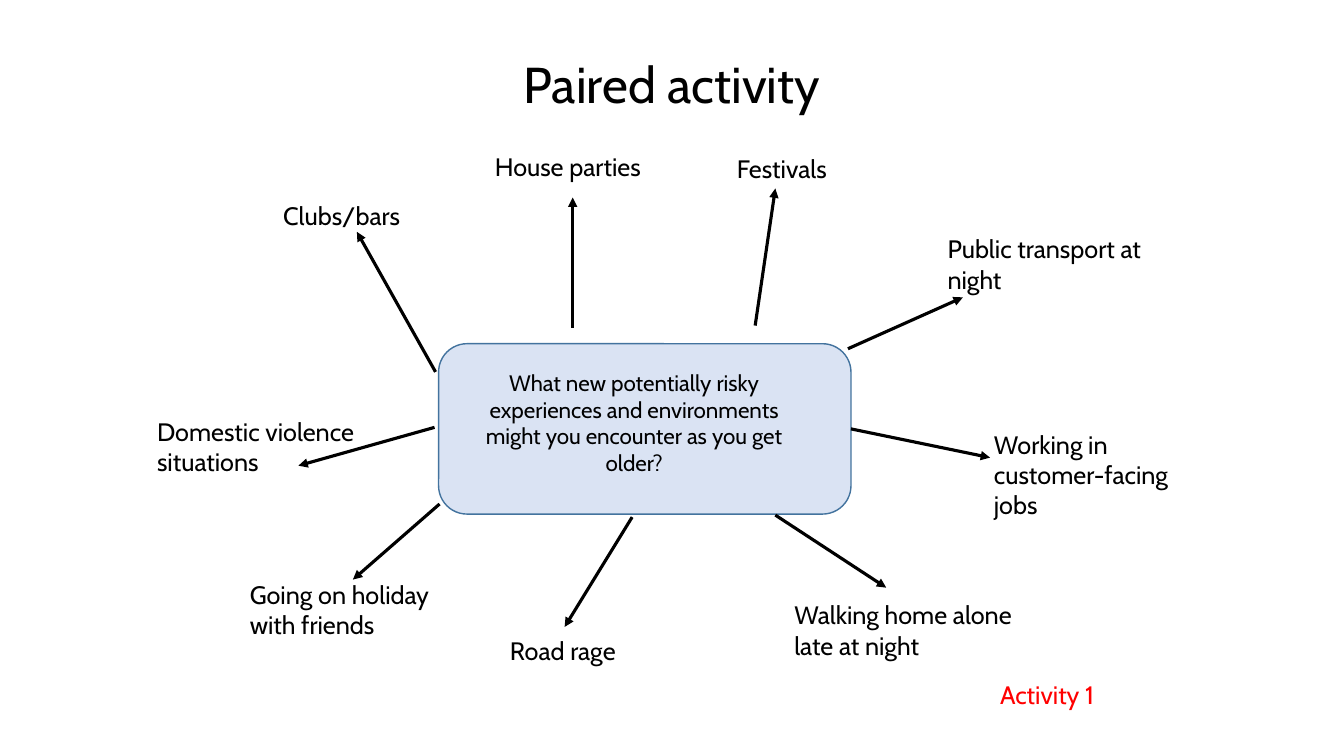
from pptx import Presentation
from pptx.dml.color import RGBColor
from pptx.enum.shapes import MSO_CONNECTOR, MSO_SHAPE
from pptx.enum.text import MSO_ANCHOR, MSO_AUTO_SIZE, PP_ALIGN
from pptx.oxml.ns import qn
from pptx.util import Pt
from lxml import etree

PX = 9144
FONT = "Cabin"
ROUND = MSO_SHAPE.ROUNDED_RECTANGLE
STRAIGHT = MSO_CONNECTOR.STRAIGHT
TOP = MSO_ANCHOR.TOP
GROW = MSO_AUTO_SIZE.SHAPE_TO_FIT_TEXT
LEFT, CENTER = PP_ALIGN.LEFT, PP_ALIGN.CENTER
RIGHT_SIDE = 3

COLORS = {"ink": "000000", "red": "FF0000", "fill": "DAE3F3", "edge": "43739E"}

RISKS = [
    ("Clubs/bars", (271, 194, 240, 40), (432, 369, 354, 230)),
    ("House parties", (481, 145, 240, 40), (568, 325, 568, 196)),
    ("Festivals", (721, 147, 240, 40), (749, 323, 769, 187)),
    ("Public transport at night", (930, 227, 240, 71), (841, 346, 955, 295)),
    ("Working in customer-facing jobs", (976, 421, 240, 71), (844, 425, 982, 454)),
    ("Walking home alone late at night", (778, 590, 240, 71), (769, 511, 879, 583)),
    ("Road rage", (496, 625, 240, 40), (627, 513, 560, 622)),
    ("Domestic violence situations", (146, 408, 240, 71), (431, 424, 296, 462)),
    ("Going on holiday with friends", (238, 570, 240, 71), (436, 500, 350, 575)),
]


def emu(nums):
    return [n * PX for n in nums]


def color(name):
    return RGBColor.from_string(COLORS[name])


def write(shape, text, size, align=LEFT, ink="ink"):
    frame = shape.text_frame
    frame.text = text
    frame.word_wrap = True
    frame.auto_size = GROW
    frame.vertical_anchor = TOP
    para = frame.paragraphs[0]
    para.alignment = align
    font = para.runs[0].font
    font.name = FONT
    font.size = Pt(size)
    font.color.rgb = color(ink)


def add_title(slide, text, area):
    title = slide.shapes.title
    title.left, title.top, title.width, title.height = emu(area)
    write(title, text, 36, CENTER)


def add_label(slide, text, area, size=18, align=LEFT, ink="ink"):
    write(slide.shapes.add_textbox(*emu(area)), text, size, align, ink)


def add_panel(slide, area):
    panel = slide.shapes.add_shape(ROUND, *emu(area))
    panel.shadow.inherit = False
    panel.fill.solid()
    panel.fill.fore_color.rgb = color("fill")
    panel.line.color.rgb = color("edge")
    panel.line.width = Pt(1)
    return panel


def add_arrow(slide, ends):
    arrow = slide.shapes.add_connector(STRAIGHT, *emu(ends))
    arrow.line.color.rgb = color("ink")
    arrow.line.width = Pt(2.25)
    props = arrow.element.spPr
    etree.SubElement(props.find(qn("a:ln")), qn("a:tailEnd"), type="triangle")
    etree.SubElement(props, qn("a:effectLst"))
    return arrow


def main():
    deck = Presentation()
    deck.slide_width, deck.slide_height = emu((1333, 750))
    slide = deck.slides.add_slide(deck.slide_layouts[5])
    add_title(slide, "Paired activity", (251, 48, 831, 71))

    panel = add_panel(slide, (435, 341, 409, 169))
    add_label(
        slide,
        "What new potentially risky experiences and environments "
        "might you encounter as you get older?",
        (458, 361, 342, 118), 16, CENTER,
    )

    for text, area, ends in RISKS:
        add_label(slide, text, area)
        arrow = add_arrow(slide, ends)
        if ends[:2] == (844, 425):
            arrow.begin_connect(panel, RIGHT_SIDE)

    add_label(slide, "Activity 1", (982, 669, 304, 40), ink="red")
    deck.save("out.pptx")


if __name__ == "__main__":
    main()
